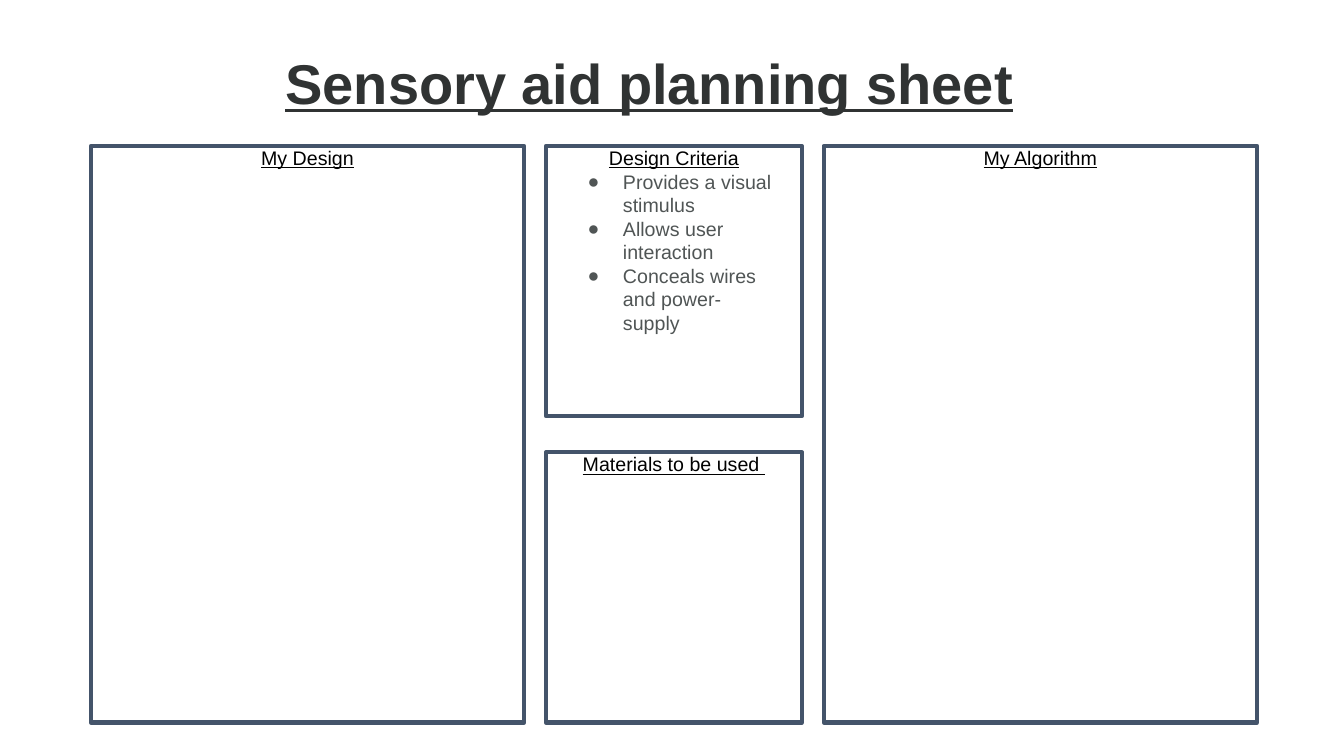
from lxml import etree
from pptx import Presentation
from pptx.dml.color import RGBColor
from pptx.enum.shapes import MSO_SHAPE
from pptx.enum.text import MSO_ANCHOR, PP_ALIGN
from pptx.oxml.ns import qn
from pptx.util import Cm, Pt

RECTANGLE = MSO_SHAPE.RECTANGLE
TOP = MSO_ANCHOR.TOP
CENTER, LEFT = PP_ALIGN.CENTER, PP_ALIGN.LEFT

FONT = "Arial"
BLACK, GREY, TITLE_GREY, NAVY = "000000", "505555", "303333", "44546A"

MARGIN, PANEL_TOP, PANEL_BOTTOM = 2.29, 3.68, 18.21
WIDE, NARROW, GAP = 10.92, 6.45, 0.55
NARROW_HEIGHT = 6.81
CRITERIA = [
    "Provides a visual stimulus",
    "Allows user interaction",
    "Conceals wires and power-supply",
]


def color(hex_string):
    """Turn a hex string into a colour."""
    return RGBColor.from_string(hex_string)


def add_text_box(page, left, top, width, height, inset=0.25, inset_top=0.25):
    """Add an empty wrapping text box and return its text frame."""
    box = page.shapes.add_textbox(Cm(left), Cm(top), Cm(width), Cm(height))
    frame = box.text_frame
    frame.word_wrap = True
    frame.vertical_anchor = TOP
    frame.margin_left = frame.margin_right = frame.margin_bottom = Cm(inset)
    frame.margin_top = Cm(inset_top)
    return frame


def write(para, text, size=14, fill=BLACK, bold=False, underline=False, align=CENTER):
    """Write one formatted span into a paragraph."""
    para.alignment = align
    span = para.add_run()
    span.text = text
    span.font.name = FONT
    span.font.size = Pt(size)
    span.font.bold = bold
    span.font.underline = underline
    span.font.color.rgb = color(fill)


def add_bullet(para, fill):
    """Give a paragraph a hanging round bullet."""
    properties = para._p.get_or_add_pPr()
    properties.set("marL", str(Cm(1.27)))
    properties.set("indent", str(-Cm(0.89)))
    bullet_color = etree.SubElement(properties, qn("a:buClr"))
    etree.SubElement(bullet_color, qn("a:srgbClr"), val=fill)
    etree.SubElement(properties, qn("a:buFont"), typeface=FONT)
    etree.SubElement(properties, qn("a:buChar"), char="●")


def add_title(page, left, top, width, height):
    """Place the sheet title."""
    frame = add_text_box(page, left, top, width, height, inset=0, inset_top=0.12)
    para = frame.paragraphs[0]
    para.line_spacing = 1.07
    write(para, "Sensory aid planning sheet", size=40, fill=TITLE_GREY,
          bold=True, underline=True)


def add_panel(page, heading, left, top, width, height, side, text_height, bullets=()):
    """Draw an outlined panel with a heading and optional bullets."""
    panel = page.shapes.add_shape(RECTANGLE, Cm(left), Cm(top), Cm(width), Cm(height))
    panel.shadow.inherit = False
    panel.fill.background()
    panel.line.color.rgb = color(NAVY)
    panel.line.width = Pt(3)
    etree.SubElement(panel._element.spPr.find(qn("a:ln")), qn("a:round"))

    frame = add_text_box(page, left + side, top - 0.25, width - 2 * side, text_height)
    write(frame.paragraphs[0], heading, underline=True)
    for bullet in bullets:
        para = frame.add_paragraph()
        add_bullet(para, GREY)
        write(para, bullet, fill=GREY, align=LEFT)


def add_planning_sheet(page):
    """Lay out the title and the four planning panels."""
    add_title(page, MARGIN, 0.99, 28.14, 1.55)
    middle = MARGIN + WIDE + GAP
    right = middle + NARROW + GAP
    for heading, left in (("My Design", MARGIN), ("My Algorithm", right)):
        add_panel(page, heading, left, PANEL_TOP, WIDE, PANEL_BOTTOM - PANEL_TOP,
                  side=0.61, text_height=0.94)
    narrow_panels = (
        ("Design Criteria", PANEL_TOP, CRITERIA),
        ("Materials to be used ", PANEL_BOTTOM - NARROW_HEIGHT, ()),
    )
    for heading, top, bullets in narrow_panels:
        add_panel(page, heading, middle, top, NARROW, NARROW_HEIGHT,
                  side=0.42, text_height=6.1, bullets=bullets)


def main():
    """Build and save the deck."""
    deck = Presentation()
    deck.slide_width, deck.slide_height = Cm(33.87), Cm(19.05)
    page = deck.slides.add_slide(deck.slide_layouts[6])
    add_planning_sheet(page)
    deck.save("out.pptx")


if __name__ == "__main__":
    main()
